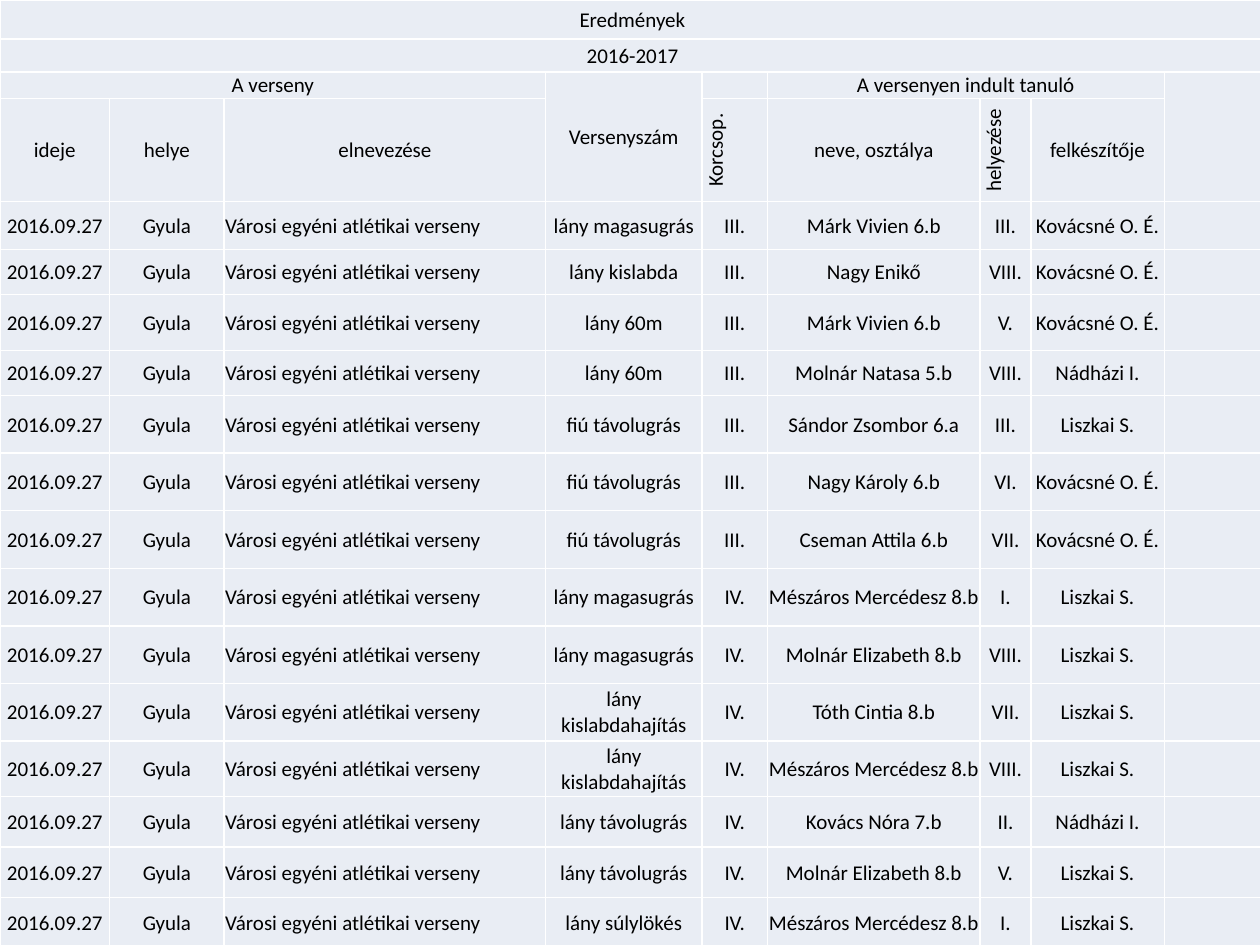
"""Build a slide with a table of school sports results."""
from lxml.etree import SubElement
from pptx import Presentation
from pptx.dml.color import RGBColor
from pptx.enum.text import MSO_ANCHOR, PP_ALIGN
from pptx.oxml.ns import qn
from pptx.util import Cm, Pt

INKS = {"text": "000000", "cell": "E9EDF4", "rule": "FFFFFF"}
FONT = "Calibri"
SIZE = Pt(12)
WIDTHS = [2.21, 2.31, 6.48, 3.15, 1.32, 4.29, 1.02, 2.69, 2.03]
HEIGHTS = [0.79, 0.66, 0.48, 2.08, 0.96, 0.91, 1.13, 0.91,
           *[1.16] * 6, 1.12, 1.02, 1.02, 1.03]
SPANS = [(0, 0, 0, 8), (1, 0, 1, 8), (2, 0, 2, 2),
         (2, 3, 3, 3), (2, 5, 2, 7), (2, 8, 3, 8)]
HEADS = [
    ["Eredmények"],
    ["2016-2017"],
    ["A verseny", "", "", "Versenyszám", "", "A versenyen indult tanuló"],
    ["ideje", "helye", "elnevezése", "", "Korcsop.",
     "neve, osztálya", "helyezése", "felkészítője"],
]
EVENT = ["2016.09.27", "Gyula", "Városi egyéni atlétikai verseny"]
SCORES = [
    ["lány magasugrás", "III.", "Márk Vivien 6.b", "III.", "Kovácsné O. É."],
    ["lány kislabda", "III.", "Nagy Enikő", "VIII.", "Kovácsné O. É."],
    ["lány 60m", "III.", "Márk Vivien 6.b", "V.", "Kovácsné O. É."],
    ["lány 60m", "III.", "Molnár Natasa 5.b", "VIII.", "Nádházi I."],
    ["fiú távolugrás", "III.", "Sándor Zsombor 6.a", "III.", "Liszkai S."],
    ["fiú távolugrás", "III.", "Nagy Károly 6.b", "VI.", "Kovácsné O. É."],
    ["fiú távolugrás", "III.", "Cseman Attila 6.b", "VII.", "Kovácsné O. É."],
    ["lány magasugrás", "IV.", "Mészáros Mercédesz 8.b", "I.", "Liszkai S."],
    ["lány magasugrás", "IV.", "Molnár Elizabeth 8.b", "VIII.", "Liszkai S."],
    ["lány kislabdahajítás", "IV.", "Tóth Cintia 8.b", "VII.", "Liszkai S."],
    ["lány kislabdahajítás", "IV.", "Mészáros Mercédesz 8.b", "VIII.", "Liszkai S."],
    ["lány távolugrás", "IV.", "Kovács Nóra 7.b", "II.", "Nádházi I."],
    ["lány távolugrás", "IV.", "Molnár Elizabeth 8.b", "V.", "Liszkai S."],
    ["lány súlylökés", "IV.", "Mészáros Mercédesz 8.b", "I.", "Liszkai S."],
]


def style(cell):
    """Give a cell its margins, rules and fill."""
    cell.margin_left = cell.margin_right = cell.margin_top = Cm(0.02)
    cell.margin_bottom = 0
    cell.vertical_anchor = MSO_ANCHOR.MIDDLE
    props = cell._tc.get_or_add_tcPr()
    for side in ("lnL", "lnR", "lnT", "lnB"):
        line = SubElement(props, qn(f"a:{side}"), w=str(Pt(1)))
        paint = SubElement(line, qn("a:solidFill"))
        SubElement(paint, qn("a:srgbClr"), val=INKS["rule"])
    cell.fill.solid()
    cell.fill.fore_color.rgb = RGBColor.from_string(INKS["cell"])


def write(cell, text, align):
    """Put text in a cell, or keep an empty cell at the text size."""
    para = cell.text_frame.paragraphs[0]
    para.alignment = align
    if not text:
        SubElement(para._p, qn("a:endParaRPr"), sz=str(int(SIZE.pt * 100)))
        return
    run = para.add_run()
    run.text = text
    run.font.name = FONT
    run.font.size = SIZE
    run.font.bold = False
    run.font.color.rgb = RGBColor.from_string(INKS["text"])


def turn(cell):
    """Make the text of a cell read upwards."""
    cell._tc.get_or_add_tcPr().set("vert", "vert270")


def add_grid(slide, rows):
    """Add the table and fill it row by row."""
    frame = slide.shapes.add_table(len(HEIGHTS), len(WIDTHS), 0, 0,
                                   Cm(sum(WIDTHS)), Cm(sum(HEIGHTS)))
    grid = frame.table
    grid.first_row = grid.horz_banding = False
    for col, width in zip(grid.columns, WIDTHS):
        col.width = Cm(width)
    for row, height in zip(grid.rows, HEIGHTS):
        row.height = Cm(height)
    for r, texts in enumerate(rows):
        for c in range(len(WIDTHS)):
            cell = grid.cell(r, c)
            text = texts[c] if c < len(texts) else ""
            left = c == 2 and r >= len(HEADS)
            style(cell)
            write(cell, text, PP_ALIGN.LEFT if left else PP_ALIGN.CENTER)
    for top, left, low, right in SPANS:
        grid.cell(top, left).merge(grid.cell(low, right))
    return grid


def main():
    """Build and save the slide."""
    deck = Presentation()
    deck.slide_width, deck.slide_height = Cm(25.4), Cm(19.05)
    slide = deck.slides.add_slide(deck.slide_layouts[6])
    grid = add_grid(slide, HEADS + [EVENT + score for score in SCORES])
    for c in (4, 6):
        turn(grid.cell(3, c))
    deck.save("out.pptx")


if __name__ == "__main__":
    main()
